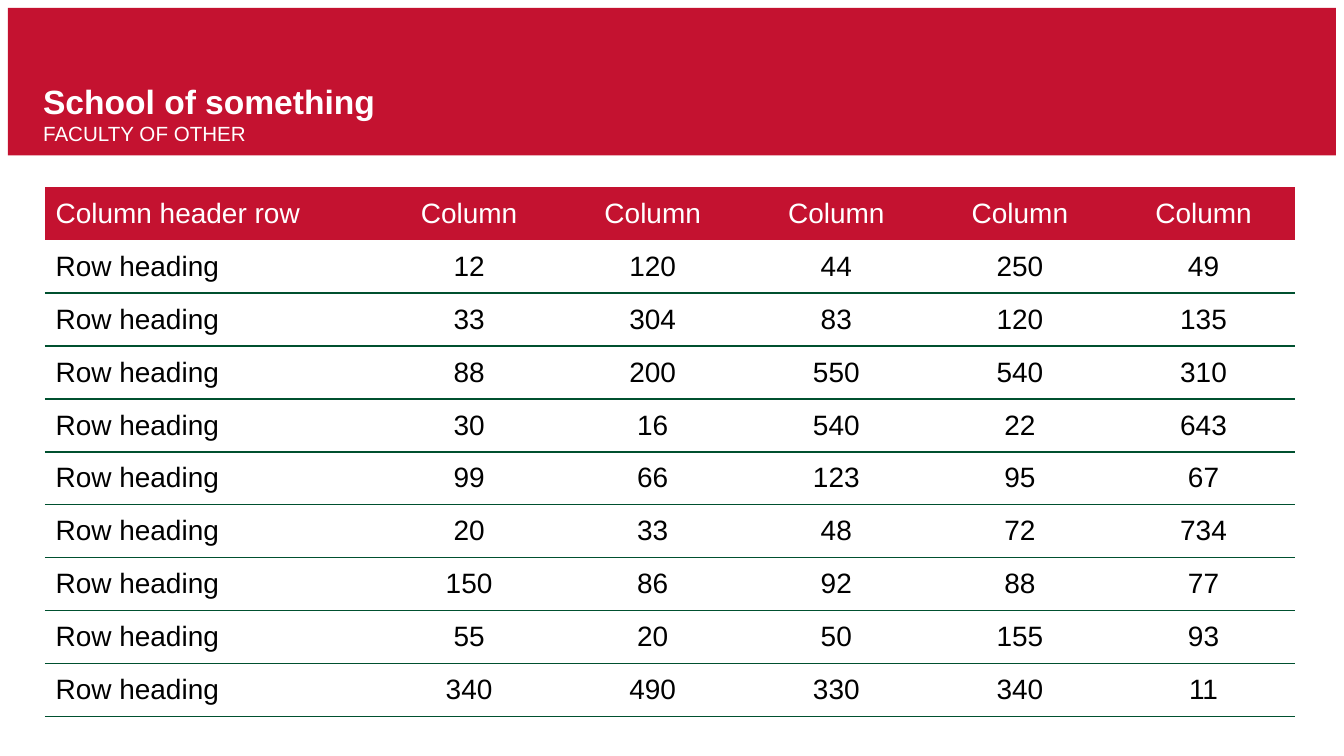
from lxml import etree
from pptx import Presentation
from pptx.dml.color import RGBColor
from pptx.enum.shapes import MSO_SHAPE
from pptx.enum.text import MSO_ANCHOR, MSO_AUTO_SIZE, PP_ALIGN
from pptx.oxml import parse_xml
from pptx.oxml.ns import nsdecls, qn
from pptx.util import Cm, Pt

RED = RGBColor(0xC4, 0x12, 0x30)
GREEN = RGBColor(0x00, 0x50, 0x2F)
WHITE = RGBColor(0xFF, 0xFF, 0xFF)
BLACK = RGBColor(0x00, 0x00, 0x00)
FONT = "Arial"
NO_STYLE_NO_GRID = "{2D5ABB26-0587-4C30-8999-92F81FD0307C}"

FIGURES = [
    (12, 120, 44, 250, 49),
    (33, 304, 83, 120, 135),
    (88, 200, 550, 540, 310),
    (30, 16, 540, 22, 643),
    (99, 66, 123, 95, 67),
    (20, 33, 48, 72, 734),
    (150, 86, 92, 88, 77),
    (55, 20, 50, 155, 93),
    (340, 490, 330, 340, 11),
]
ROWS = [("Column header row",) + ("Column",) * 5]
ROWS += [("Row heading",) + figures for figures in FIGURES]
COLUMN_WIDTHS = [Cm(6.28)] + [Cm(3.47)] * 5
ROW_HEIGHT = Cm(1)


def style_font(font, size, color, bold=False):
    font.name = FONT
    font.size = Pt(size)
    font.bold = bold
    font.color.rgb = color


def rule_below(cell):
    line = parse_xml(
        f'<a:lnB {nsdecls("a")} w="{Pt(1)}"><a:solidFill>'
        f'<a:srgbClr val="{GREEN}"/></a:solidFill></a:lnB>'
    )
    cell._tc.get_or_add_tcPr().insert(0, line)


prs = Presentation()
prs.slide_width = Cm(25.4)
prs.slide_height = Cm(14.29)
slide = prs.slides.add_slide(prs.slide_layouts[5])

table_frame = slide.shapes.add_table(
    len(ROWS), len(COLUMN_WIDTHS), Cm(0.85), Cm(3.54),
    sum(COLUMN_WIDTHS), ROW_HEIGHT * len(ROWS),
)
table = table_frame.table
table.horz_banding = False
table.first_row = False
table._tbl.tblPr.find(qn("a:tableStyleId")).text = NO_STYLE_NO_GRID
for column, width in zip(table.columns, COLUMN_WIDTHS):
    column.width = width

for row_index, values in enumerate(ROWS):
    table.rows[row_index].height = ROW_HEIGHT
    is_header = row_index == 0
    for column_index, value in enumerate(values):
        cell = table.cell(row_index, column_index)
        cell.text_frame.text = str(value)
        cell.vertical_anchor = MSO_ANCHOR.MIDDLE
        cell.margin_left = cell.margin_right = Cm(0.2)
        cell.margin_top = cell.margin_bottom = Cm(0.1)
        paragraph = cell.text_frame.paragraphs[0]
        paragraph.alignment = PP_ALIGN.CENTER if column_index else PP_ALIGN.LEFT
        style_font(paragraph.runs[0].font, 15, WHITE if is_header else BLACK)
        if is_header:
            cell.fill.solid()
            cell.fill.fore_color.rgb = RED
        else:
            cell.fill.background()
            rule_below(cell)

banner = slide.shapes.add_shape(
    MSO_SHAPE.RECTANGLE, Cm(0.15), Cm(0.15), Cm(25.1), Cm(2.79)
)
banner.shadow.inherit = False
banner.fill.solid()
banner.fill.fore_color.rgb = RED
banner.line.fill.background()

title = slide.shapes.title
banner.element.addnext(title.element)
title.left, title.top, title.width, title.height = Cm(0.56), Cm(1.4), Cm(10.2), Cm(2.2)
heading = title.text_frame
heading.text = "School of something\nFACULTY OF OTHER"
heading.word_wrap = True
heading.auto_size = MSO_AUTO_SIZE.NONE
heading.vertical_anchor = MSO_ANCHOR.TOP
for paragraph, size, bold in zip(heading.paragraphs, (18, 11), (True, False)):
    paragraph.alignment = PP_ALIGN.LEFT
    style_font(paragraph.runs[0].font, size, WHITE, bold)

prs.save("out.pptx")
